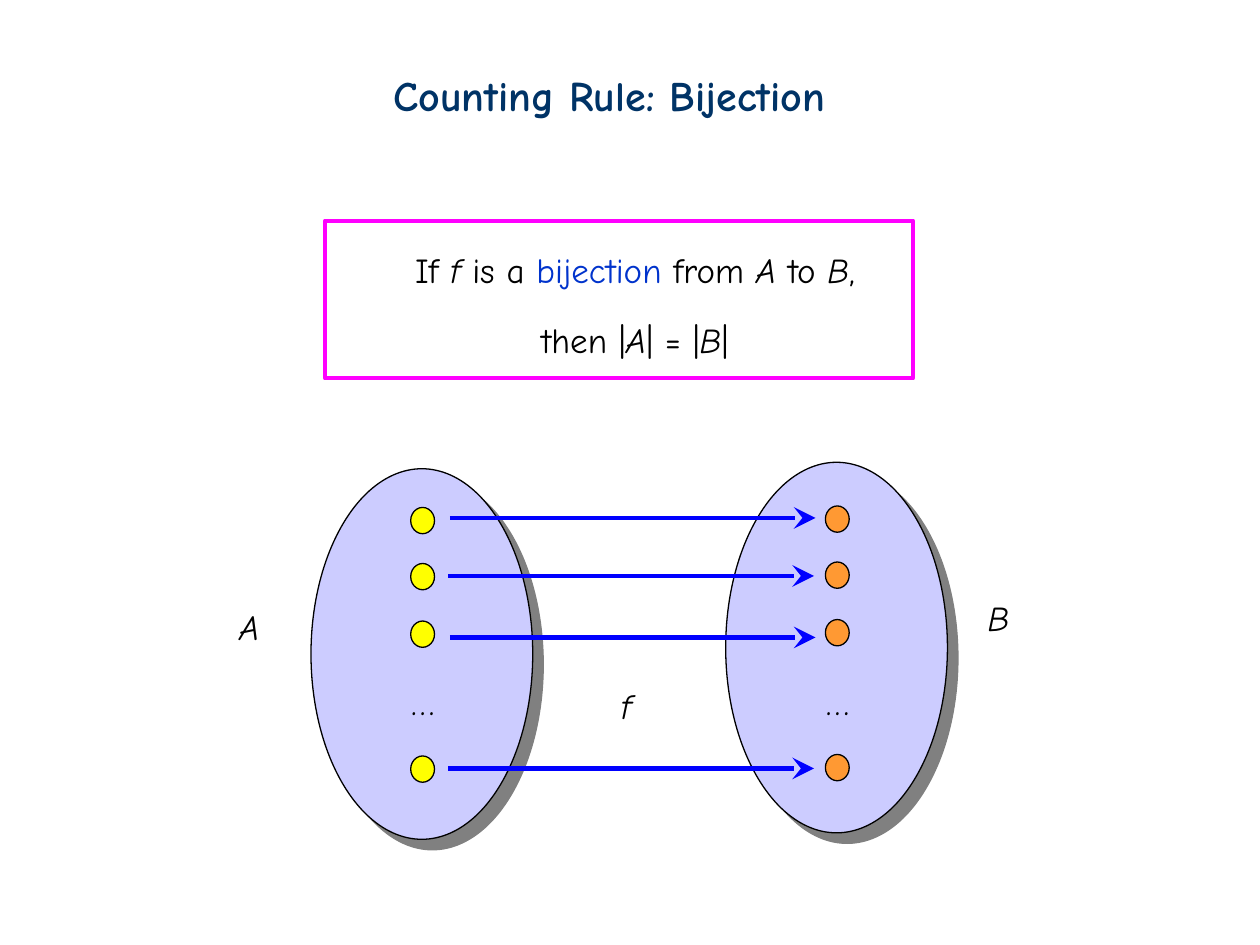
import pptx
import pptx.util
import pptx.dml.color
import pptx.enum.shapes
import pptx.enum.text
import lxml.etree
import pptx.oxml.ns

Cm = pptx.util.Cm
Pt = pptx.util.Pt
RGBColor = pptx.dml.color.RGBColor
Shape = pptx.enum.shapes.MSO_SHAPE
Align = pptx.enum.text.PP_ALIGN
qn = pptx.oxml.ns.qn

NAVY = RGBColor(0x00, 0x33, 0x66)
BLACK = RGBColor(0x00, 0x00, 0x00)
BLUE = RGBColor(0x00, 0x33, 0xCC)
LILAC = RGBColor(0xCC, 0xCC, 0xFF)
YELLOW = RGBColor(0xFF, 0xFF, 0x00)
ORANGE = RGBColor(0xFF, 0x99, 0x33)
ARROW = RGBColor(0x00, 0x00, 0xFF)
PINK = RGBColor(0xFF, 0x00, 0xFF)
GREY = "808080"


class Page:
    face = "Comic Neue"
    size = 20

    def __init__(self, slide):
        self.slide = slide
        self.layer = slide.shapes

    def group(self):
        self.layer = self.slide.shapes.add_group_shape().shapes

    def ungroup(self):
        self.layer = self.slide.shapes

    def place(self, item, left, top, width, height):
        item.left, item.top = Cm(left), Cm(top)
        item.width, item.height = Cm(width), Cm(height)

    def style(self, font, size, color):
        font.name = self.face
        font.size = Pt(size)
        font.color.rgb = color

    def frame(self, item, wrap):
        frame = item.text_frame
        frame.word_wrap = wrap
        frame.vertical_anchor = pptx.enum.text.MSO_ANCHOR.TOP
        frame.auto_size = pptx.enum.text.MSO_AUTO_SIZE.SHAPE_TO_FIT_TEXT
        return frame

    def title(self, text, *box):
        item = self.slide.shapes.title
        self.place(item, *box)
        frame = self.frame(item, False)
        frame.text = text
        para = frame.paragraphs[0]
        para.alignment = Align.LEFT
        self.style(para.font, 24, NAVY)
        para.font.bold = True

    def body(self, lines, *box):
        item = self.slide.placeholders[1]
        self.place(item, *box)
        frame = self.frame(item, True)
        for index, (space, parts) in enumerate(lines):
            para = frame.add_paragraph() if index else frame.paragraphs[0]
            para.alignment = Align.CENTER
            para.line_spacing = space
            props = para._p.get_or_add_pPr()
            props.set("marL", str(Cm(0.95)))
            props.set("indent", str(Cm(-0.95)))
            lxml.etree.SubElement(props, qn("a:buNone"))
            self.style(para.font, self.size, BLACK)
            for text in parts:
                run = para.add_run()
                run.text = text
                if text in ("f", "A", "B"):
                    run.font.italic = True
                elif text == "bijection":
                    run.font.color.rgb = BLUE

    def label(self, text, left, top, width, align=Align.LEFT, italic=True):
        item = self.layer.add_textbox(Cm(left), Cm(top), Cm(width), Cm(1.09))
        frame = self.frame(item, False)
        frame.text = text
        para = frame.paragraphs[0]
        para.alignment = align
        self.style(para.font, self.size, BLACK)
        para.font.italic = italic

    def shape(self, kind, box, fill, line=BLACK, width=0.75):
        item = self.layer.add_shape(kind, *map(Cm, box))
        item.shadow.inherit = False
        if fill is None:
            item.fill.background()
        else:
            item.fill.solid()
            item.fill.fore_color.rgb = fill
        item.line.color.rgb = line
        item.line.width = Pt(width)
        return item

    def oval(self, left, top):
        item = self.shape(Shape.OVAL, (left, top, 4.47, 7.47), LILAC)
        effects = item.element.spPr.find(qn("a:effectLst"))
        shade = lxml.etree.SubElement(
            effects, qn("a:outerShdw"), dist=str(Pt(8.5)), dir="2700000",
            algn="ctr", rotWithShape="0")
        lxml.etree.SubElement(shade, qn("a:srgbClr"), val=GREY)

    def dot(self, left, top, fill):
        self.shape(Shape.OVAL, (left, top, 0.48, 0.53), fill)

    def arrow(self, left, top, length):
        item = self.layer.add_connector(
            pptx.enum.shapes.MSO_CONNECTOR.STRAIGHT,
            Cm(left), Cm(top), Cm(left + length), Cm(top))
        item.line.color.rgb = ARROW
        item.line.width = Pt(2.5)
        props = item.element.spPr
        lxml.etree.SubElement(props.find(qn("a:ln")), qn("a:tailEnd"),
                              type="stealth", w="lg", len="lg")
        lxml.etree.SubElement(props, qn("a:effectLst"))


def main():
    deck = pptx.Presentation()
    deck.slide_width, deck.slide_height = Cm(25.4), Cm(19.05)
    page = Page(deck.slides.add_slide(deck.slide_layouts[1]))

    page.title("Counting Rule: Bijection", 7.67, 1.27, 10.24, 1.27)
    page.body([
        (1, ["If ", "f", " is a ", "bijection", " from ", "A", " to ", "B", ","]),
        (1.5, ["then |", "A", "| = |", "B", "|"]),
    ], 1.27, 4.88, 23.06, 2.54)

    page.group()
    page.oval(6.27, 9.45)
    page.oval(14.63, 9.32)
    page.label("A", 4.57, 12.09, 1.02)
    page.label("B", 19.66, 11.91, 0.97)
    for left, lift, fill in ((8.28, 0, YELLOW), (16.64, 0.03, ORANGE)):
        for top in (10.23, 11.36, 12.52, 15.24):
            page.dot(left, top - lift, fill)
        page.label("…", left - 0.25, 13.59, 0.99, Align.CENTER, False)

    page.group()
    for left, top in ((9.07, 10.44), (9.04, 11.61), (9.07, 12.85), (9.04, 15.49)):
        page.arrow(left, top, 7.37)

    page.ungroup()
    page.label("f", 12.27, 13.67, 0.86)
    page.shape(Shape.RECTANGLE, (6.55, 4.45, 11.86, 3.18), None, PINK, 2.25)

    deck.save("out.pptx")


if __name__ == "__main__":
    main()
